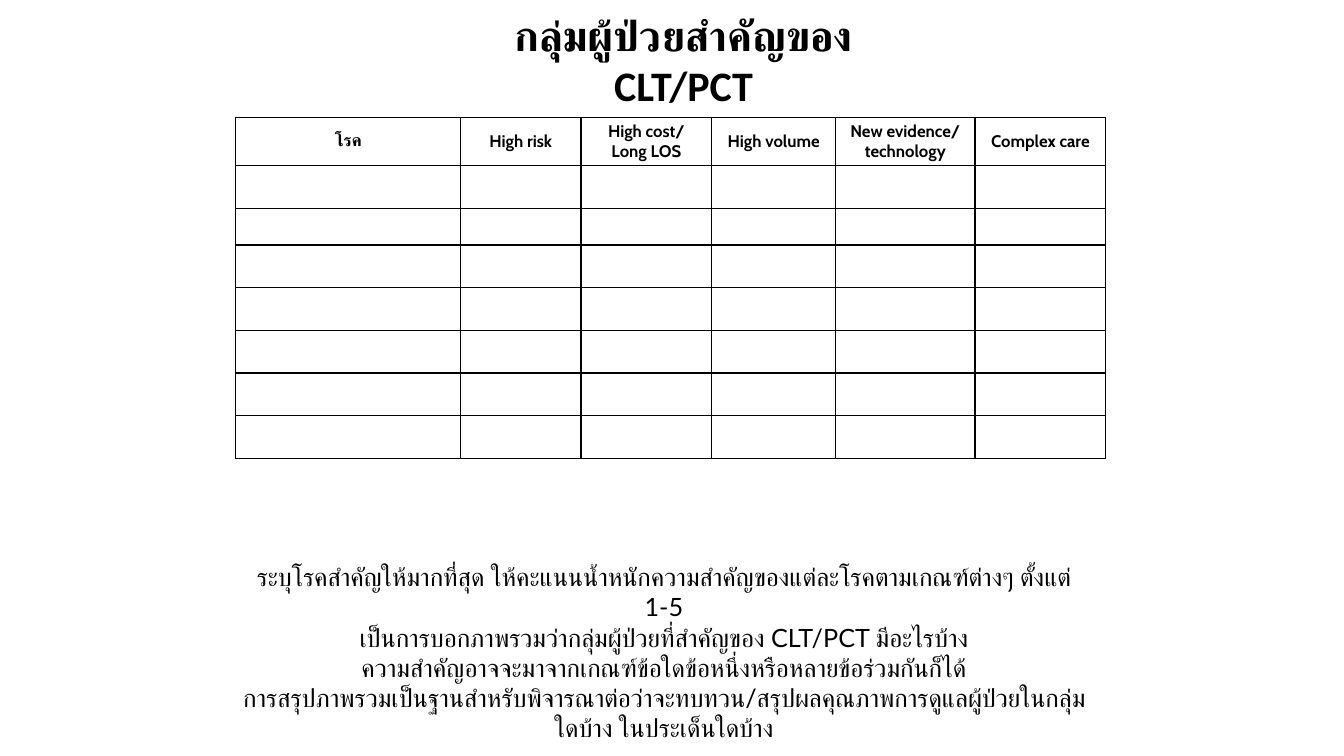
import pptx
import pptx.util
import pptx.dml.color
import pptx.enum.text
import pptx.oxml
from pptx.oxml.ns import nsdecls

Pt = pptx.util.Pt
ALIGN = pptx.enum.text.PP_ALIGN
ANCHOR = pptx.enum.text.MSO_ANCHOR

# Content
COLORS = {"ink": "000000", "paper": "FFFFFF"}
TITLE = "กลุ่มผู้ป่วยสำคัญของ CLT/PCT"
COLUMNS = [  # heading, width
    ("โรค", 160.5),
    ("High risk", 86),
    ("High cost/\nLong LOS", 93.5),
    ("High volume", 88.5),
    ("New evidence/\ntechnology", 99.5),
    ("Complex care", 93.5),
]
ROW_HEIGHTS = [34.75, 30.5, 26] + [30.5] * 5
NOTES = [
    "ระบุโรคสำคัญให้มากที่สุด ให้คะแนนน้ำหนักความสำคัญของแต่ละโรคตามเกณฑ์ต่างๆ ตั้งแต่ 1-5",
    "เป็นการบอกภาพรวมว่ากลุ่มผู้ป่วยที่สำคัญของ CLT/PCT มีอะไรบ้าง",
    "ความสำคัญอาจจะมาจากเกณฑ์ข้อใดข้อหนึ่งหรือหลายข้อร่วมกันก็ได้",
    "การสรุปภาพรวมเป็นฐานสำหรับพิจารณาต่อว่าจะทบทวน/สรุปผลคุณภาพการดูแลผู้ป่วยในกลุ่มใดบ้าง ในประเด็นใดบ้าง",
]
LEFT = 168.5


def write_centred(text_frame, text, font_name, size, bold=False):
    text_frame.text = text
    for paragraph in text_frame.paragraphs:
        paragraph.alignment = ALIGN.CENTER
        for run in paragraph.runs:
            run.font.name = font_name
            run.font.size = Pt(size)
            run.font.bold = bold
            run.font.color.rgb = pptx.dml.color.RGBColor.from_string(COLORS["ink"])


def add_text(slide, box, text, size, font_name, bold=False, anchor=ANCHOR.TOP):
    text_frame = slide.shapes.add_textbox(*map(Pt, box)).text_frame
    text_frame.word_wrap = True
    text_frame.vertical_anchor = anchor
    text_frame.margin_left = text_frame.margin_right = Pt(5)
    text_frame.margin_top = text_frame.margin_bottom = Pt(3)
    write_centred(text_frame, text, font_name, size, bold)


def style_cell(cell):
    cell.vertical_anchor = ANCHOR.MIDDLE
    cell.margin_left = cell.margin_right = Pt(4.5)
    cell.margin_top = cell.margin_bottom = 0
    properties = cell._tc.get_or_add_tcPr()
    for side in ("lnL", "lnR", "lnT", "lnB"):
        properties.append(pptx.oxml.parse_xml(
            f'<a:{side} {nsdecls("a")} w="{Pt(1)}"><a:solidFill>'
            f'<a:srgbClr val="{COLORS["ink"]}"/></a:solidFill></a:{side}>'))
    cell.fill.solid()
    cell.fill.fore_color.rgb = pptx.dml.color.RGBColor.from_string(COLORS["paper"])


def add_disease_table(slide):
    widths = [width for _, width in COLUMNS]
    table = slide.shapes.add_table(
        len(ROW_HEIGHTS), len(COLUMNS), Pt(LEFT), Pt(83.75),
        Pt(sum(widths)), Pt(sum(ROW_HEIGHTS))).table
    table.first_row = table.horz_banding = False
    for column, width in zip(table.columns, widths):
        column.width = Pt(width)
    for row, height in zip(table.rows, ROW_HEIGHTS):
        row.height = Pt(height)
    for cell in table.iter_cells():
        style_cell(cell)
    for cell, (heading, _) in zip(table.rows[0].cells, COLUMNS):
        write_centred(cell.text_frame, heading, "Cabin", 12, bold=True)


def main():
    presentation = pptx.Presentation()
    presentation.slide_width, presentation.slide_height = Pt(960), Pt(540)
    slide = presentation.slides.add_slide(presentation.slide_layouts[6])

    # Scoring table, title and instructions
    add_disease_table(slide)
    add_text(slide, (343.5, 21.5, 289.5, 42), TITLE, 30, "Calibri", True, ANCHOR.MIDDLE)
    add_text(slide, (LEFT, 398, 611.5, 94.5), "\n".join(NOTES), 18, "Lato")

    presentation.save("out.pptx")


if __name__ == "__main__":
    main()
